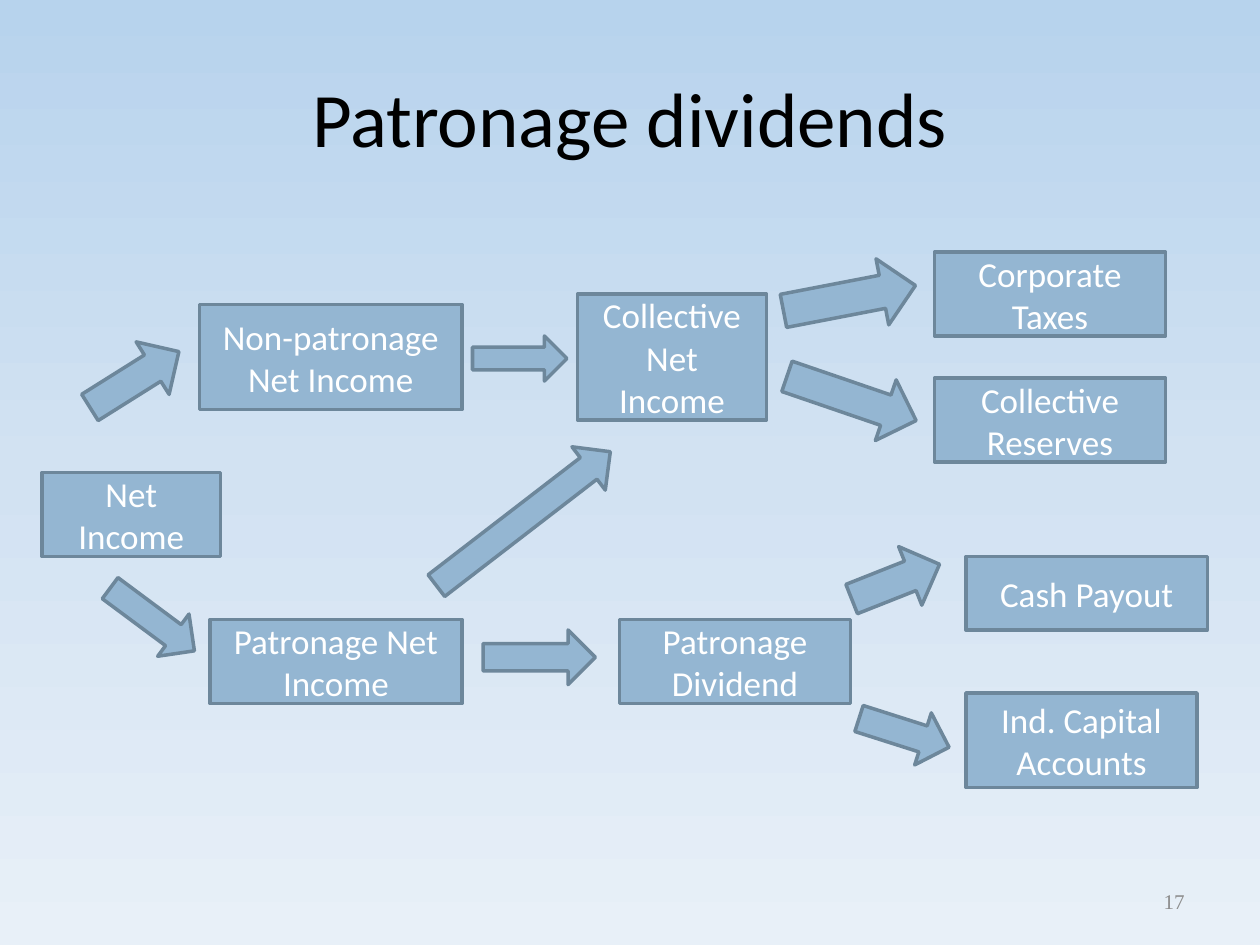
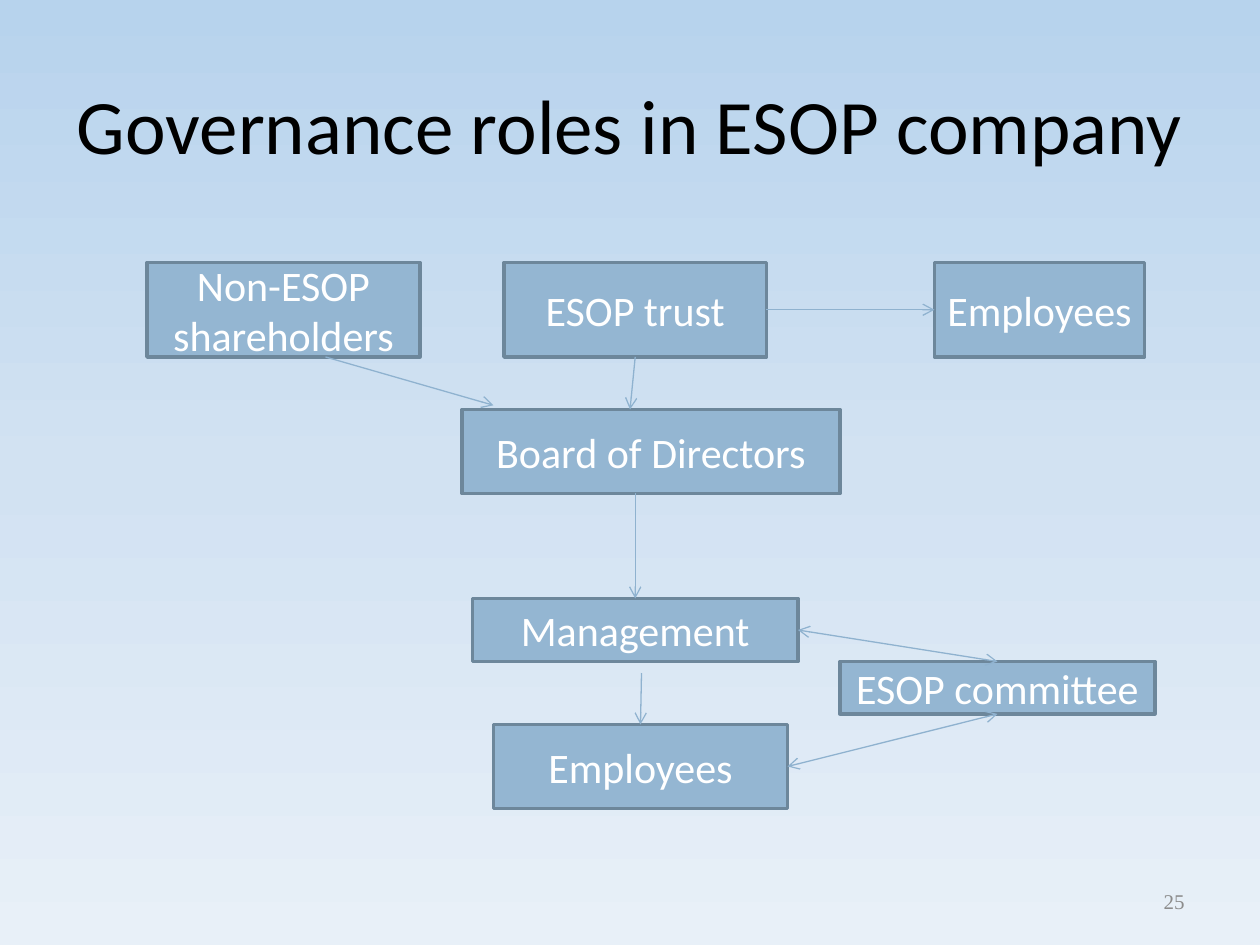
from copy import deepcopy

from lxml import etree
from pptx import Presentation
from pptx import util as u
from pptx.dml.color import RGBColor
from pptx.enum import shapes, text
from pptx.oxml import ns

SCALE = 7620


def px(n):
    return u.Emu(n * SCALE)


def rgb(code):
    return RGBColor.from_string(code)


class Deck:
    FONT, NUMBER_FONT = "Calibri", "Times New Roman"
    TITLE, NUMBER, LABEL = "000000", "8C8C8C", "FFFFFF"
    FILL, EDGE, LINK = "94B6D2", "6D879B", "8FB2CF"
    SKY = [(0, "B7D3ED"), (0.5, "D2E2F2"), (1, "E8F0F8")]

    def __init__(self):
        self.prs = Presentation()
        self.prs.slide_width, self.prs.slide_height = px(1200), px(900)
        self.background()

    def background(self):
        master = self.prs.slide_master
        fill = master.background.fill
        fill.gradient()
        fill.gradient_angle = 270
        first = master.element.find(".//" + ns.qn("a:gs"))
        first.addnext(deepcopy(first))
        for stop, (position, color) in zip(fill.gradient_stops, self.SKY):
            stop.position = position
            stop.color.rgb = rgb(color)

    def label(self, sp, words, size, color, align, font=FONT):
        tf = sp.text_frame
        tf.text = words
        tf.word_wrap = True
        tf.vertical_anchor = text.MSO_ANCHOR.MIDDLE
        p = tf.paragraphs[0]
        p.alignment = align
        r = p.runs[0]
        r.font.size, r.font.name = u.Pt(size), font
        r.font.color.rgb = rgb(color)

    def slide(self, title, top, height, number):
        self.s = self.prs.slides.add_slide(self.prs.slide_layouts[5])
        sp = self.s.shapes.title
        sp.left, sp.top, sp.width, sp.height = map(px, (60, top, 1080, height))
        self.label(sp, title, 44, self.TITLE, text.PP_ALIGN.CENTER)
        sp = self.s.shapes.add_textbox(*map(px, (860, 834, 280, 48)))
        self.label(sp, str(number), 12, self.NUMBER, text.PP_ALIGN.RIGHT, self.NUMBER_FONT)

    def shape(self, kind, frame):
        sp = self.s.shapes.add_shape(kind, *map(px, frame))
        sp.shadow.inherit = False
        sp.fill.solid()
        sp.fill.fore_color.rgb = rgb(self.FILL)
        sp.line.color.rgb = rgb(self.EDGE)
        sp.line.width = u.Pt(2)
        return sp

    def box(self, words, size, *frame):
        sp = self.shape(shapes.MSO_SHAPE.RECTANGLE, frame)
        self.label(sp, words, size, self.LABEL, text.PP_ALIGN.CENTER)

    def arrow(self, rotation, *frame):
        self.shape(shapes.MSO_SHAPE.RIGHT_ARROW, frame).rotation = rotation

    def link(self, *points, both=False):
        c = self.s.shapes.add_connector(shapes.MSO_CONNECTOR.STRAIGHT, *map(px, points))
        c.line.color.rgb = rgb(self.LINK)
        c.line.width = u.Pt(0.75)
        ln = c.element.spPr.find(ns.qn("a:ln"))
        for end in ["a:headEnd", "a:tailEnd"] if both else ["a:tailEnd"]:
            etree.SubElement(ln, ns.qn(end), type="arrow")
        etree.SubElement(c.element.spPr, ns.qn("a:effectLst"))


def patronage(deck):
    deck.slide("Patronage dividends", 36, 150, 17)
    for words, *frame in [
        ("Net Income", 40, 450, 170, 80),
        ("Non-patronage Net Income", 190, 290, 250, 100),
        ("Patronage Net Income", 200, 590, 240, 80),
        ("Collective Net Income", 550, 280, 180, 120),
        ("Patronage Dividend", 590, 590, 220, 80),
        ("Corporate Taxes", 890, 240, 220, 80),
        ("Collective Reserves", 890, 360, 220, 80),
        ("Cash Payout", 920, 530, 230, 70),
        ("Ind. Capital Accounts", 920, 660, 220, 90),
    ]:
        deck.box(words, 20, *frame)
    for rotation, *frame in [
        (327.9, 78, 332, 100, 59),
        (36.6, 95, 565, 100, 50),
        (0, 450, 320, 90, 43),
        (322.4, 394, 468, 209, 52),
        (0, 460, 600, 107, 52),
        (349.1, 745, 252, 128, 64),
        (18.9, 746, 349, 130, 61),
        (338.4, 808, 524, 90, 60),
        (17.7, 816, 672, 90, 52),
    ]:
        deck.arrow(rotation, *frame)


def governance(deck):
    deck.slide("Governance roles in ESOP company", 50, 136, 25)
    for words, *frame in [
        ("Non-ESOP shareholders", 140, 250, 260, 90),
        ("ESOP trust", 480, 250, 250, 90),
        ("Employees", 890, 250, 200, 90),
        ("Board of Directors", 440, 390, 360, 80),
        ("Management", 450, 570, 310, 60),
        ("ESOP committee", 800, 630, 300, 50),
        ("Employees", 470, 690, 280, 80),
    ]:
        deck.box(words, 24, *frame)
    for points in [
        (310, 340, 470, 386),
        (605, 340, 600, 390),
        (730, 295, 890, 295),
        (605, 470, 605, 570),
        (611, 641, 610, 690),
    ]:
        deck.link(*points)
    deck.link(760, 600, 950, 630, both=True)
    deck.link(750, 730, 950, 680, both=True)


def main():
    deck = Deck()
    patronage(deck)
    governance(deck)
    deck.prs.save("out.pptx")


if __name__ == "__main__":
    main()
